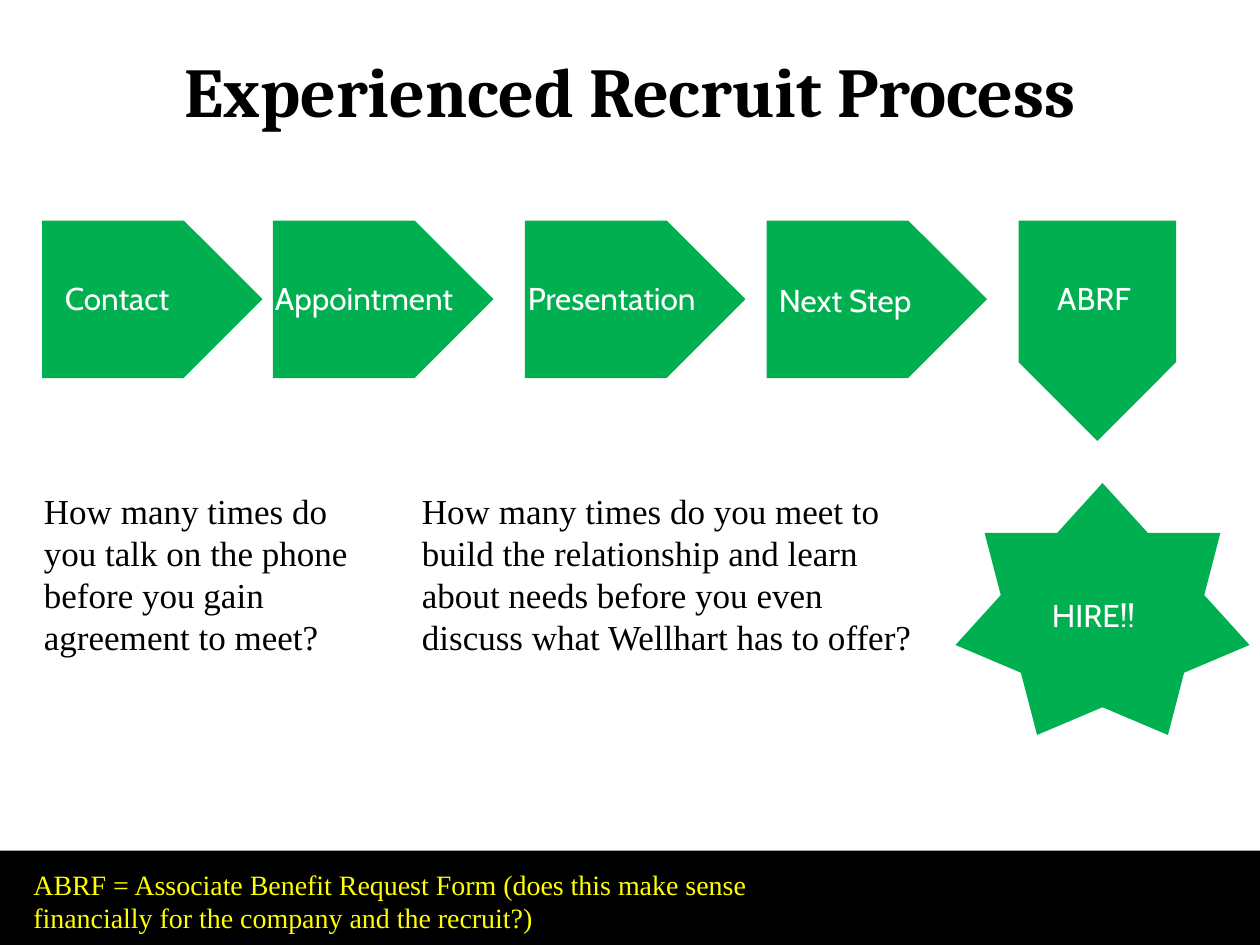
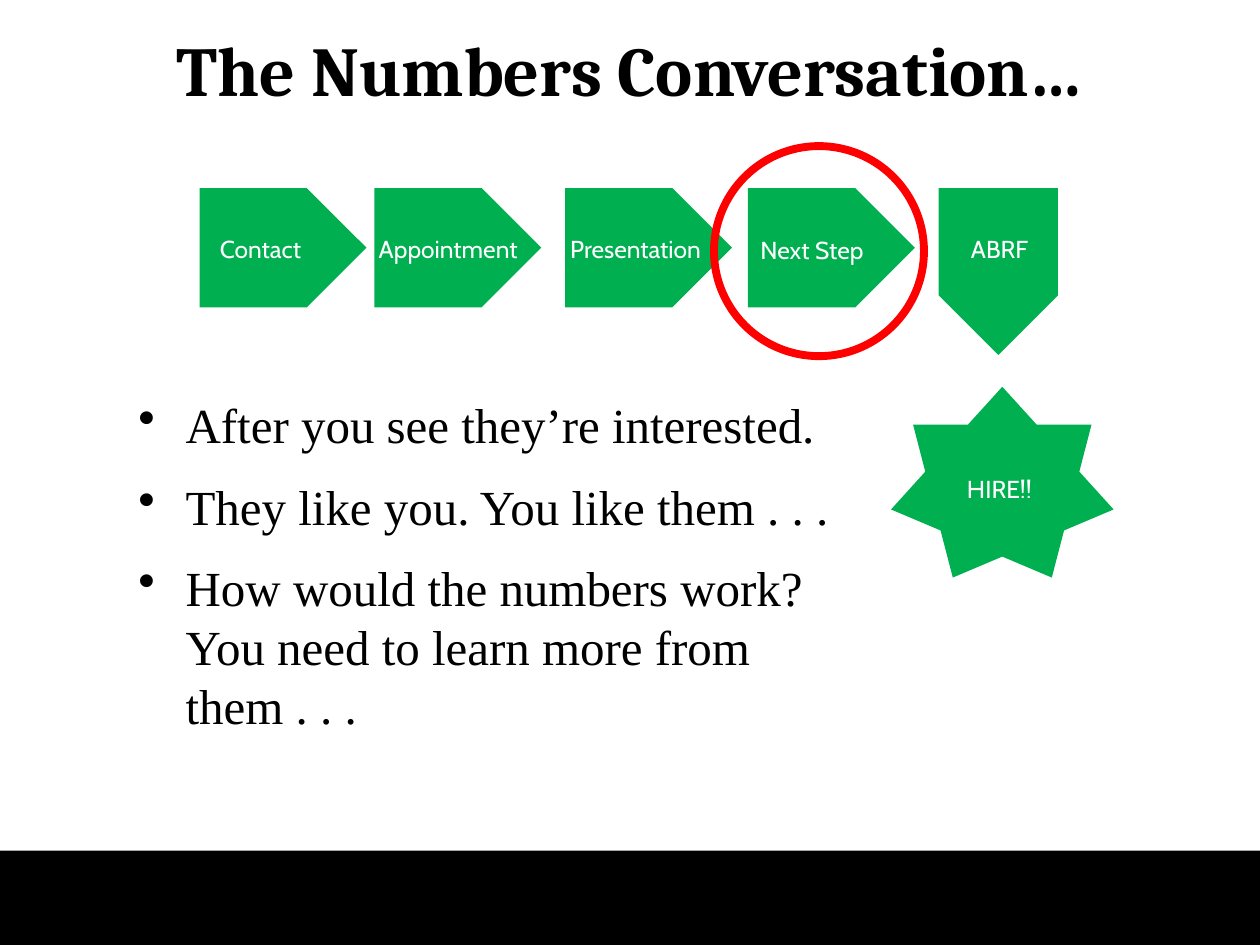
from lxml import etree
from pptx import Presentation
from pptx.dml import color as dml
from pptx.enum import shapes as es, text as et
from pptx.oxml import ns
from pptx.util import Pt

GREEN, BLACK, WHITE, RED, YELLOW = "00B050", "000000", "FFFFFF", "FF0000", "FFFF00"
KIND = es.MSO_SHAPE
HEAD = {"name": "Cambria", "size": Pt(40), "bold": True}
BODY = {"name": "Times New Roman"}
STEPS = [
    ("Contact", 24, 30, 156, 85),
    ("Appointment", 156, 150, 156, 133),
    ("Presentation", 300, 294.5, 156, 131),
    ("Next Step", 438, 438, 157, 104),
]


def paint(part, tone):
    """Give a fill a solid colour."""
    part.solid()
    part.fore_color.rgb = dml.RGBColor.from_string(tone)


def style(font, tone, **vals):
    """Set font attributes and colour."""
    for key, val in vals.items():
        setattr(font, key, val)
    paint(font.fill, tone)


def form(slide, kind, left, top, wide, high, fill=GREEN):
    """Add a preset shape, unfilled if fill is None."""
    shape = slide.shapes.add_shape(kind, Pt(left), Pt(top), Pt(wide), Pt(high))
    shape.shadow.inherit = False
    shape.line.fill.background()
    if fill:
        paint(shape.fill, fill)
    else:
        shape.fill.background()
    return shape


def write(slide, lines, left, top, wide, high, tone, wrap=True, **vals):
    """Add a text box with one paragraph per line."""
    box = slide.shapes.add_textbox(Pt(left), Pt(top), Pt(wide), Pt(high))
    frame = box.text_frame
    frame.text = "\n".join(lines)
    frame.word_wrap = wrap
    frame.auto_size = et.MSO_AUTO_SIZE.SHAPE_TO_FIT_TEXT
    for para in frame.paragraphs:
        style(para.runs[0].font, tone, **vals)
    return frame


def bullet(frame, indent, gap):
    """Turn paragraphs into a spaced bullet list."""
    for num, para in enumerate(frame.paragraphs):
        props = para._p.get_or_add_pPr()
        props.set("marL", str(Pt(indent)))
        props.set("indent", str(-Pt(indent)))
        etree.SubElement(props, ns.qn("a:buChar"), char="•")
        para.space_before = Pt(gap if num else 0)
        para.space_after = Pt(gap)


def start(deck, name, top):
    """Add a slide with its title and bottom band."""
    slide = deck.slides.add_slide(deck.slide_layouts[5])
    title = slide.shapes.title
    spot = {"left": 36, "top": top, "width": 648, "height": 90}
    for key, val in spot.items():
        setattr(title, key, Pt(val))
    frame = title.text_frame
    frame.text = name
    frame.auto_size = et.MSO_AUTO_SIZE.NONE
    frame.vertical_anchor = et.MSO_ANCHOR.MIDDLE
    para = frame.paragraphs[0]
    para.alignment = et.PP_ALIGN.CENTER
    style(para.runs[0].font, BLACK, **HEAD)
    form(slide, KIND.RECTANGLE, 0, 486, 720, 54, BLACK)
    return slide


def flow(slide, left, top, scale, size):
    """Draw the recruiting steps from a corner at a scale."""
    def place(x, y, wide, high):
        return (round(left + (x - 24) * scale, 2), round(top + (y - 126) * scale, 2),
                round(wide * scale, 2), round(high * scale, 2))

    def label(name, x, y, wide):
        write(slide, [name], *place(x, y, wide, 29), WHITE, wrap=False,
              name="Cabin", size=Pt(size))

    for name, x, inset, y, wide in STEPS:
        form(slide, KIND.PENTAGON, *place(x, 126, 126, 90))
        label(name, inset, y, wide)
    down = form(slide, KIND.PENTAGON, *place(564, 144, 126, 90))
    down.rotation = 90
    label("ABRF", 597, 156, 63)
    form(slide, KIND.STAR_7_POINT, *place(546, 276, 168, 144))
    label("HIRE!!", 594, 337, 74)


def process(deck):
    """Build the recruit process slide."""
    slide = start(deck, "Experienced Recruit Process", 6)
    flow(slide, 24, 126, 1, 18)
    asks = [
        ("How many times do you talk on the phone before you gain "
         "agreement to meet?", 18, 204),
        ("How many times do you meet to build the relationship and learn about "
         "needs before you even discuss what Wellhart has to offer?", 234, 306),
    ]
    for ask, left, wide in asks:
        write(slide, [ask], left, 276, wide, 104, BLACK, size=Pt(20), **BODY)
    note = ("ABRF = Associate Benefit Request Form (does this make sense "
            "financially for the company and the recruit?)")
    write(slide, [note], 12, 492, 486, 46, YELLOW, size=Pt(16), **BODY)


def numbers(deck):
    """Build the numbers conversation slide."""
    slide = start(deck, "The Numbers Conversation…", -6)
    flow(slide, 114, 107.5, 0.757, 14)
    ring = form(slide, KIND.OVAL, 408, 83.5, 120, 120, None)
    paint(ring.line.fill, RED)
    ring.line.width = Pt(4.5)
    points = [
        "After you see they’re interested.",
        "They like you. You like them . . .",
        "How would the numbers work? You need to learn more from them . . .",
    ]
    frame = write(slide, points, 72, 222, 426, 216, BLACK, size=Pt(28), **BODY)
    frame.auto_size = et.MSO_AUTO_SIZE.NONE
    bullet(frame, 27, 6.5)


def main():
    """Build and save the deck."""
    deck = Presentation()
    deck.slide_width, deck.slide_height = Pt(720), Pt(540)
    process(deck)
    numbers(deck)
    deck.save("out.pptx")


if __name__ == "__main__":
    main()
